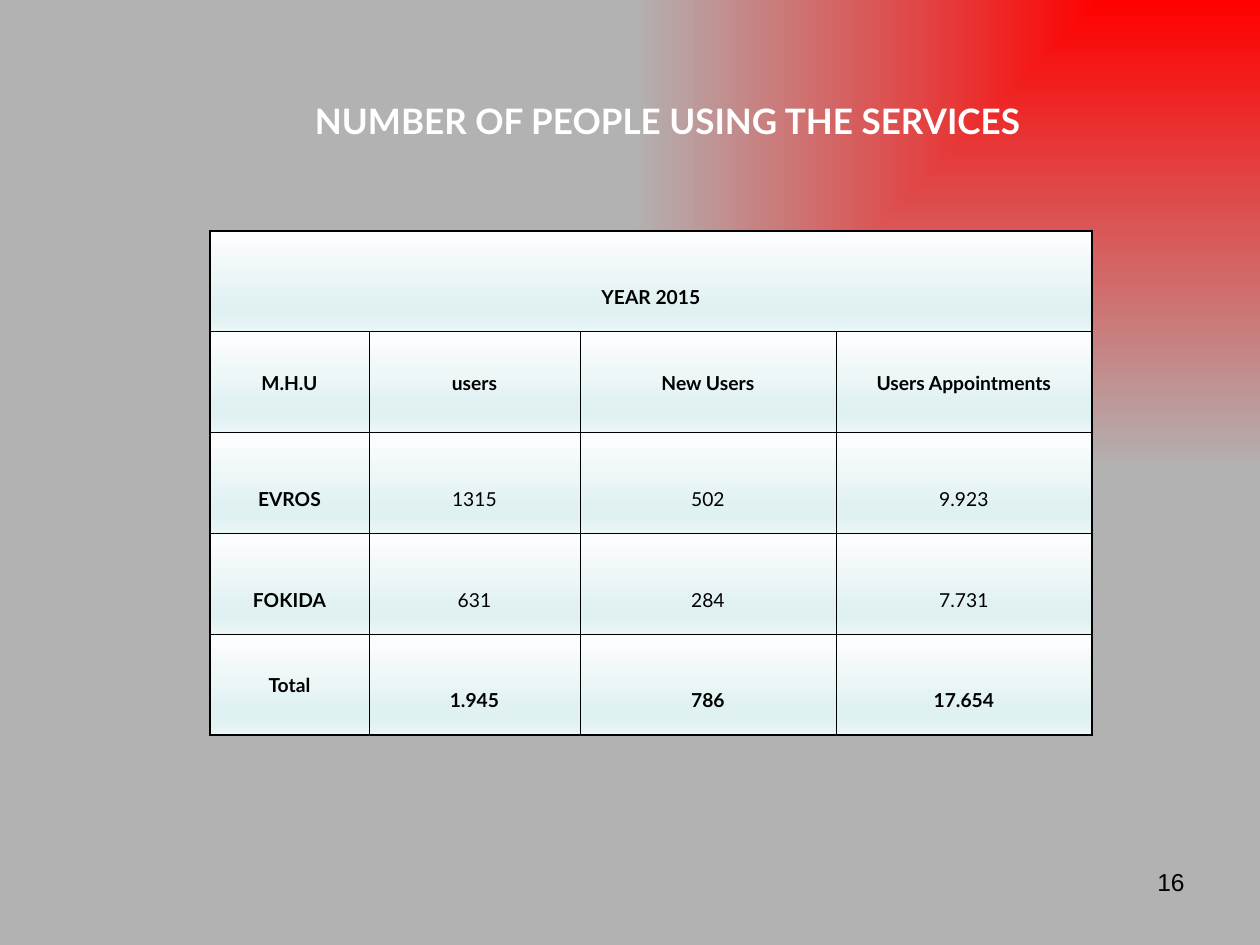
from lxml.etree import SubElement as Sub
from pptx import Presentation
from pptx.dml.color import RGBColor as RGB
from pptx.enum.text import MSO_ANCHOR as Anchor, PP_ALIGN as Align
from pptx.oxml.ns import qn
from pptx.util import Pt

SCALE = 914400 / 126
BLACK = RGB(0, 0, 0)
WHITE = RGB(255, 255, 255)
RED = RGB(255, 0, 0)
GRAY = RGB(0xB2, 0xB2, 0xB2)
SNOW = RGB(0xFC, 0xFD, 0xFE)
ICE = RGB(0xE0, 0xF1, 0xF2)
MIST = RGB(0xEB, 0xF6, 0xF7)

COLS = [159, 211, 256, 256]
ROWS = [
    ["YEAR 2015", "", "", ""],
    ["M.H.U", "users", "New Users", "Users Appointments"],
    ["EVROS", "1315", "502", "9.923"],
    ["FOKIDA", "631", "284", "7.731"],
    ["Total", "1.945", "786", "17.654"],
]


def px(n):
    return round(n * SCALE)


def write(frame, text, size=11, font="Lato", color=BLACK, bold=False,
          align=Align.CENTER):
    para = frame.paragraphs[0]
    para.alignment = align
    run = para.add_run()
    run.text = text
    run.font.size = Pt(size)
    run.font.name = font
    run.font.bold = bold
    run.font.color.rgb = color


def blend(host, stops):
    grad = Sub(host, qn("a:gradFill"), rotWithShape="1")
    items = Sub(grad, qn("a:gsLst"))
    for pos, color in stops:
        stop = Sub(items, qn("a:gs"), pos=str(pos * 1000))
        Sub(stop, qn("a:srgbClr"), val=str(color))
    return grad


def edge(props, side, width):
    line = Sub(props, qn("a:ln" + side), w=str(Pt(width)))
    fill = Sub(line, qn("a:solidFill"))
    Sub(fill, qn("a:srgbClr"), val=str(BLACK))


def paint(slide):
    slide.background.fill.solid()
    back = slide.element.find(".//" + qn("p:bgPr"))
    solid = back.find(qn("a:solidFill"))
    grad = blend(back, [(0, RED), (100, GRAY)])
    back.replace(solid, grad)
    shade = Sub(grad, qn("a:path"))
    shade.set("path", "rect")
    Sub(shade, qn("a:fillToRect"), l="100000", b="100000")


def label(slide, box, text, anchor=Anchor.TOP, **style):
    frame = slide.shapes.add_textbox(*map(px, box)).text_frame
    frame.word_wrap = True
    frame.vertical_anchor = anchor
    write(frame, text, **style)


def dress(cell, row, col):
    middle = row == 1 or (row == 4 and col == 0)
    cell.vertical_anchor = Anchor.MIDDLE if middle else Anchor.BOTTOM
    cell.margin_left = cell.margin_right = cell.margin_top = px(1)
    cell.margin_bottom = px(0 if middle else 23)
    props = cell._tc.get_or_add_tcPr()
    last = col + cell.span_width == len(COLS)
    outer = {"L": col == 0, "R": last, "T": row == 0,
             "B": row == len(ROWS) - 1}
    for side, thick in outer.items():
        edge(props, side, 1 if thick else 0.5)
    grad = blend(props, [(5, SNOW), (74, ICE), (83, ICE), (100, MIST)])
    Sub(grad, qn("a:lin"), ang="5400000", scaled="0")


def grid(slide, box):
    table = slide.shapes.add_table(len(ROWS), len(COLS), *map(px, box)).table
    table.first_row = table.horz_banding = False
    for col, width in zip(table.columns, COLS):
        col.width = px(width)
    for row in table.rows:
        row.height = px(box[3] / len(ROWS))
    table.cell(0, 0).merge(table.cell(0, len(COLS) - 1))
    for r, texts in enumerate(ROWS):
        for c, text in enumerate(texts):
            cell = table.cell(r, c)
            dress(cell, r, c)
            if text:
                write(cell.text_frame, text, bold=c == 0 or r in (1, 4))


def main():
    deck = Presentation()
    deck.slide_width, deck.slide_height = px(1260), px(945)
    slide = deck.slides.add_slide(deck.slide_layouts[6])
    paint(slide)
    label(slide, (903, 861, 294, 65), "16", size=14, font="Arial",
          align=Align.RIGHT)
    label(slide, (210, 53, 924, 136), "NUMBER OF PEOPLE USING THE SERVICES ",
          anchor=Anchor.MIDDLE, size=20, color=WHITE, bold=True)
    grid(slide, (210, 231, 882, 504))
    deck.save("out.pptx")


if __name__ == "__main__":
    main()
